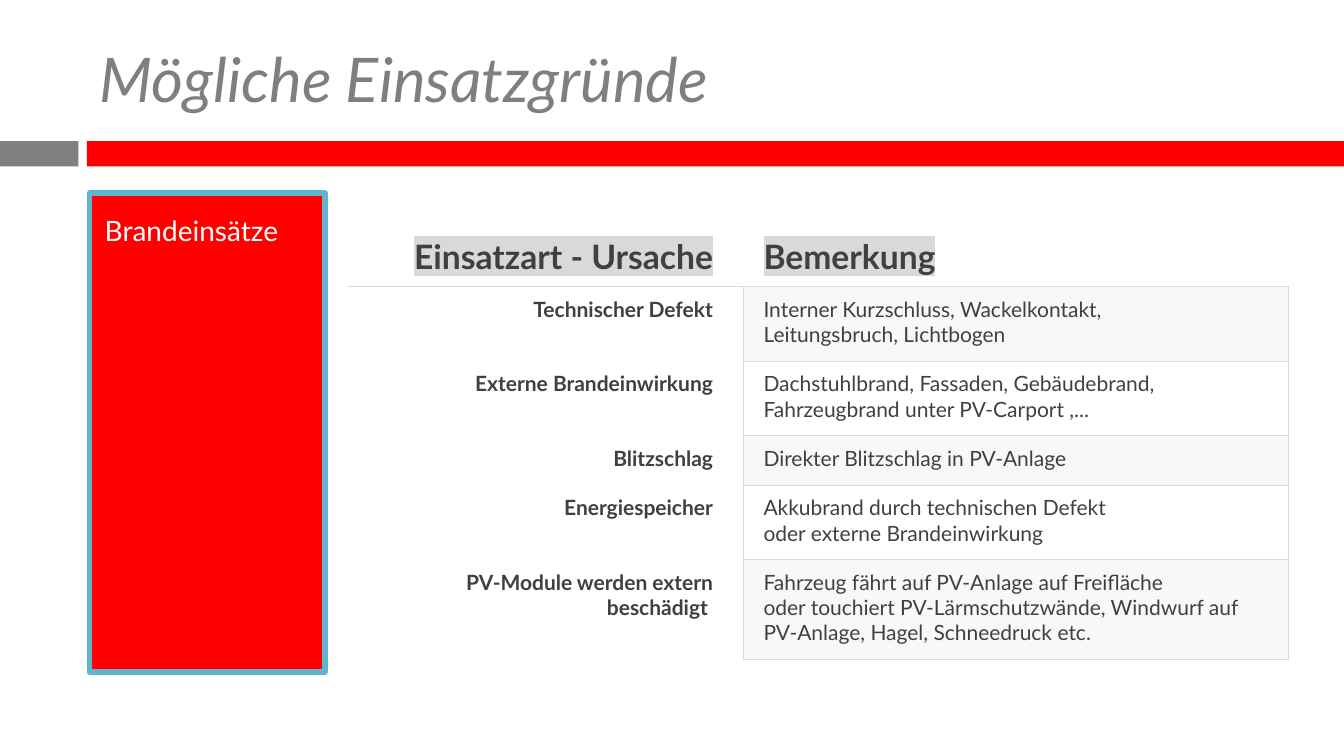
from lxml.etree import SubElement
from pptx import Presentation
from pptx.dml.color import RGBColor
from pptx.enum.shapes import MSO_SHAPE as Shape
from pptx.enum.text import MSO_ANCHOR as Anchor, PP_ALIGN as Align
from pptx.oxml import parse_xml
from pptx.oxml.ns import nsdecls, qn
from pptx.util import Pt

WHITE = RGBColor(0xFF, 0xFF, 0xFF)
RED = RGBColor(0xFF, 0x00, 0x00)
GREY = RGBColor(0x80, 0x80, 0x80)
TITLE_GREY = RGBColor(0x7F, 0x7F, 0x7F)
TEXT_GREY = RGBColor(0x40, 0x40, 0x40)
HIGHLIGHT = RGBColor(0xD9, 0xD9, 0xD9)
BLUE = RGBColor(0x60, 0xB5, 0xCC)
BORDER = RGBColor(0xD8, 0xDC, 0xDC)
BAND = RGBColor(0xD8, 0xDE, 0xDC)

HEADERS = ("Einsatzart - Ursache", "Bemerkung")
CAUSES = [
    ("Technischer Defekt", "Interner Kurzschluss, Wackelkontakt,\nLeitungsbruch, Lichtbogen"),
    ("Externe Brandeinwirkung",
     "Dachstuhlbrand, Fassaden, Gebäudebrand, Fahrzeugbrand unter PV-Carport ,..."),
    ("Blitzschlag", "Direkter Blitzschlag in PV-Anlage"),
    ("Energiespeicher", "Akkubrand durch technischen Defekt\noder externe Brandeinwirkung"),
    ("PV-Module werden extern beschädigt ",
     "Fahrzeug fährt auf PV-Anlage auf Freifläche\n"
     "oder touchiert PV-Lärmschutzwände, Windwurf auf PV-Anlage, Hagel, Schneedruck etc."),
]
COLUMN_WIDTHS = (283, 389)
ROW_HEIGHTS = (43, 53.3, 53.3, 35.3, 53.3, 71.3)


class SlideBuilder:
    font = "Lato"

    def __init__(self, slide):
        self.slide = slide

    def place(self, shape, left, top, width, height):
        shape.left, shape.top = Pt(left), Pt(top)
        shape.width, shape.height = Pt(width), Pt(height)

    def insets(self, target, left, top, right, bottom):
        target.margin_left, target.margin_top = Pt(left), Pt(top)
        target.margin_right, target.margin_bottom = Pt(right), Pt(bottom)

    def add_text(self, paragraph, text, size, color, bold=False, italic=False,
                 align=Align.LEFT, highlight=None):
        paragraph.alignment = align
        for index, line in enumerate(text.split("\n")):
            if index:
                paragraph.add_line_break()
            run = paragraph.add_run()
            run.text = line
            run.font.size = Pt(size)
            run.font.bold = bold
            run.font.italic = italic
            run.font.color.rgb = color
            if highlight:
                mark = SubElement(run.font._element, qn("a:highlight"))
                SubElement(mark, qn("a:srgbClr"), val=str(highlight))
            run.font.name = self.font

    def title(self, text, left, top, width, height):
        shape = self.slide.shapes.title
        self.place(shape, left, top, width, height)
        frame = shape.text_frame
        frame.word_wrap = True
        frame.vertical_anchor = Anchor.MIDDLE
        self.add_text(frame.paragraphs[0], text, 44, TITLE_GREY, italic=True)

    def rectangle(self, left, top, width, height, color):
        shape = self.slide.shapes.add_shape(
            Shape.RECTANGLE, Pt(left), Pt(top), Pt(width), Pt(height))
        shape.shadow.inherit = False
        shape.fill.solid()
        shape.fill.fore_color.rgb = color
        shape.line.fill.background()
        return shape

    def panel(self, text, left, top, width, height):
        shape = self.rectangle(left, top, width, height, RED)
        shape.line.color.rgb = BLUE
        shape.line.width = Pt(4)
        frame = shape.text_frame
        frame.word_wrap = True
        frame.vertical_anchor = Anchor.TOP
        self.insets(frame, 10.8, 14.4, 10.8, 7.2)
        self.add_text(frame.paragraphs[0], text, 20, WHITE)

    def borders(self, cell, visible):
        properties = cell._tc.get_or_add_tcPr()
        for index, side in enumerate("LRTB"):
            paint = (f'<a:solidFill><a:srgbClr val="{BORDER}"/></a:solidFill>'
                     if side in visible else "<a:noFill/>")
            properties.insert(index, parse_xml(
                f'<a:ln{side} {nsdecls("a")} w="{Pt(0.75)}">{paint}</a:ln{side}>'))

    def band(self, cell):
        cell.fill.solid()
        cell.fill.fore_color.rgb = BAND
        color = cell._tc.tcPr.find(".//" + qn("a:srgbClr"))
        SubElement(color, qn("a:alpha"), val="20000")

    def table(self, left, top, widths, heights, headers, rows):
        table = self.slide.shapes.add_table(
            len(heights), len(widths), Pt(left), Pt(top),
            Pt(sum(widths)), Pt(sum(heights))).table
        table.first_row = table.horz_banding = False
        for column, width in zip(table.columns, widths):
            column.width = Pt(width)
        for row, height in zip(table.rows, heights):
            row.height = Pt(height)
        for row_index, texts in enumerate([headers, *rows]):
            header = row_index == 0
            for column_index, text in enumerate(texts):
                cause = column_index == 0
                cell = table.cell(row_index, column_index)
                self.insets(cell, 14.4, 7.2, 21.6 if cause else 8, 7.2)
                paragraph = cell.text_frame.paragraphs[0]
                paragraph.space_after = Pt(6)
                self.add_text(paragraph, text, 24 if header else 15, TEXT_GREY,
                              bold=header or cause,
                              align=Align.RIGHT if cause else Align.LEFT,
                              highlight=HIGHLIGHT if header else None)
                if not cause and row_index % 2:
                    self.band(cell)
                else:
                    cell.fill.background()
                if header:
                    visible = "B"
                elif cause:
                    visible = "RT" if row_index == 1 else "R"
                else:
                    visible = "LRTB"
                self.borders(cell, visible)


def main():
    presentation = Presentation()
    presentation.slide_width = Pt(960)
    presentation.slide_height = Pt(540)
    builder = SlideBuilder(presentation.slides.add_slide(presentation.slide_layouts[5]))
    builder.rectangle(0, 100.8, 56, 18, GREY)
    builder.rectangle(62, 100.8, 898, 18, RED)
    builder.title("Mögliche Einsatzgründe", 64, 21.6, 848, 68.4)
    builder.panel("Brandeinsätze", 64, 138, 168, 342)
    builder.table(248, 161.5, COLUMN_WIDTHS, ROW_HEIGHTS, HEADERS, CAUSES)
    presentation.save("out.pptx")


if __name__ == "__main__":
    main()
